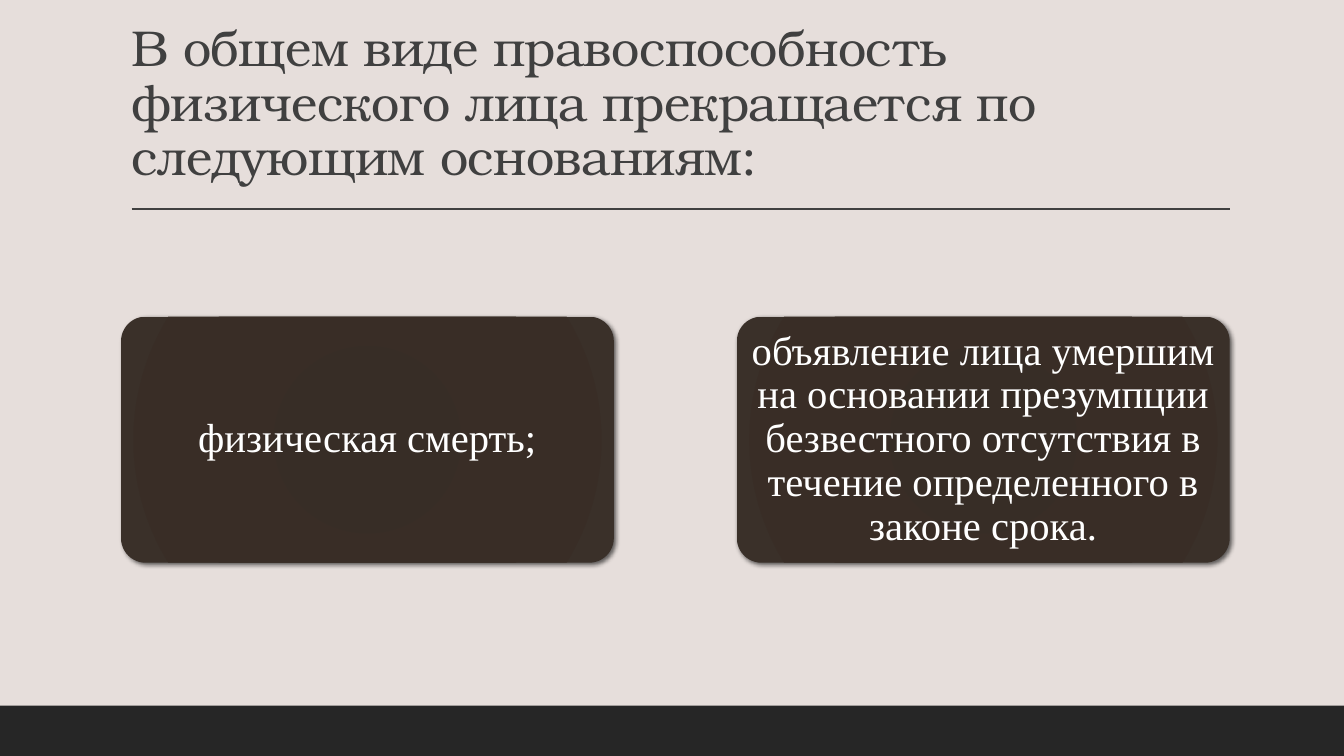
from lxml.etree import SubElement
from pptx import Presentation
from pptx.dml.color import RGBColor as RGB
from pptx.enum.shapes import MSO_CONNECTOR as LINE, MSO_SHAPE as SHAPE
from pptx.enum.text import MSO_ANCHOR as ANCHOR, MSO_AUTO_SIZE as AUTO, PP_ALIGN as ALIGN
from pptx.oxml import parse_xml
from pptx.oxml.ns import nsdecls, qn
from pptx.util import Cm, Pt

COLORS = {"background": "E6DEDB", "bar": "262626", "title": "404040",
          "text": "FFFFFF", "shadow": "000000"}
CARD_STOPS = {0: "372C25", 34: "372D26", 70: "392D26", 100: "3A3029"}
TITLE = "В общем виде правоспособность физического лица прекращается по следующим основаниям:"
GROUNDS = [
    "физическая смерть;",
    "объявление лица умершим на основании презумпции безвестного отсутствия "
    "в течение определенного в законе срока.",
]
TITLE_FONT = {"name": "TeX Gyre Bonum", "size": Pt(36), "bold": False}
CARD_FONT = {"name": "Times New Roman", "size": Pt(29), "bold": False}
TITLE_FRAME = {"word_wrap": True, "auto_size": AUTO.NONE,
               "vertical_anchor": ANCHOR.BOTTOM}
CARD_FRAME = {"word_wrap": True, "auto_size": AUTO.NONE,
              "vertical_anchor": ANCHOR.MIDDLE,
              "margin_left": Cm(0.15), "margin_right": Cm(0.15),
              "margin_top": Cm(0.1), "margin_bottom": Cm(0.1)}


def color(name):
    return RGB.from_string(COLORS[name])


def apply(target, values):
    for key, value in values.items():
        setattr(target, key, value)


def write(tf, text, frame, font, color_name, align):
    apply(tf, frame)
    p = tf.paragraphs[0]
    apply(p, {"alignment": align, "line_spacing": 0.9})
    r = p.add_run()
    r.text = text
    apply(r.font, font)
    r.font.color.rgb = color(color_name)
    return r


def add_title(slide):
    title = slide.shapes.title
    apply(title, {"left": Cm(3.05), "top": Cm(0.79),
                  "width": Cm(27.94), "height": Cm(4.04)})
    r = write(title.text_frame, TITLE, TITLE_FRAME, TITLE_FONT, "title", ALIGN.LEFT)
    r.font._element.set("spc", "-50")


def add_bar(slide, width):
    bar = slide.shapes.add_shape(SHAPE.RECTANGLE, 0, Cm(17.78), width, Cm(1.27))
    bar.shadow.inherit = False
    bar.fill.solid()
    bar.fill.fore_color.rgb = color("bar")
    bar.line.fill.background()


def add_rule(slide):
    y = Cm(5.27)
    rule = slide.shapes.add_connector(LINE.STRAIGHT, Cm(3.32), y, Cm(31), y)
    rule.line.color.rgb = color("title")
    rule.line.width = Pt(1)
    SubElement(rule._element.spPr, qn("a:effectLst"))


def fill_radial(shape):
    stops = "".join(f'<a:gs pos="{pos * 1000}"><a:srgbClr val="{rgb}"/></a:gs>'
                    for pos, rgb in CARD_STOPS.items())
    shape.fill.background()
    spPr = shape._element.spPr
    spPr.replace(spPr.find(qn("a:noFill")), parse_xml(
        f'<a:gradFill {nsdecls("a")}><a:gsLst>{stops}</a:gsLst><a:path path="circle">'
        '<a:fillToRect l="100000" t="100000" r="100000" b="100000"/>'
        '</a:path></a:gradFill>'))


def add_shadow(shape):
    shape.shadow.inherit = False
    shape._element.spPr.find(qn("a:effectLst")).append(parse_xml(
        f'<a:outerShdw {nsdecls("a")} blurRad="{Pt(3.5)}" dist="{Pt(2)}" dir="2700000" '
        f'rotWithShape="0"><a:srgbClr val="{COLORS["shadow"]}">'
        '<a:alpha val="60000"/></a:srgbClr></a:outerShdw>'))


def add_card(slide, left, text):
    card = slide.shapes.add_shape(SHAPE.ROUNDED_RECTANGLE, left, Cm(7.98),
                                  Cm(12.42), Cm(6.2))
    card.adjustments[0] = 0.1
    fill_radial(card)
    card.line.fill.background()
    add_shadow(card)
    write(card.text_frame, text, CARD_FRAME, CARD_FONT, "text", ALIGN.CENTER)


def main():
    prs = Presentation()
    prs.slide_width, prs.slide_height = Cm(33.87), Cm(19.05)
    slide = prs.slides.add_slide(prs.slide_layouts[5])
    slide.background.fill.solid()
    slide.background.fill.fore_color.rgb = color("background")

    # Frame of the slide
    add_bar(slide, prs.slide_width)
    add_rule(slide)

    # Heading
    add_title(slide)

    # One card per ground
    for i, text in enumerate(GROUNDS):
        add_card(slide, Cm(3.05) + i * Cm(15.52), text)

    prs.save("out.pptx")


if __name__ == "__main__":
    main()
